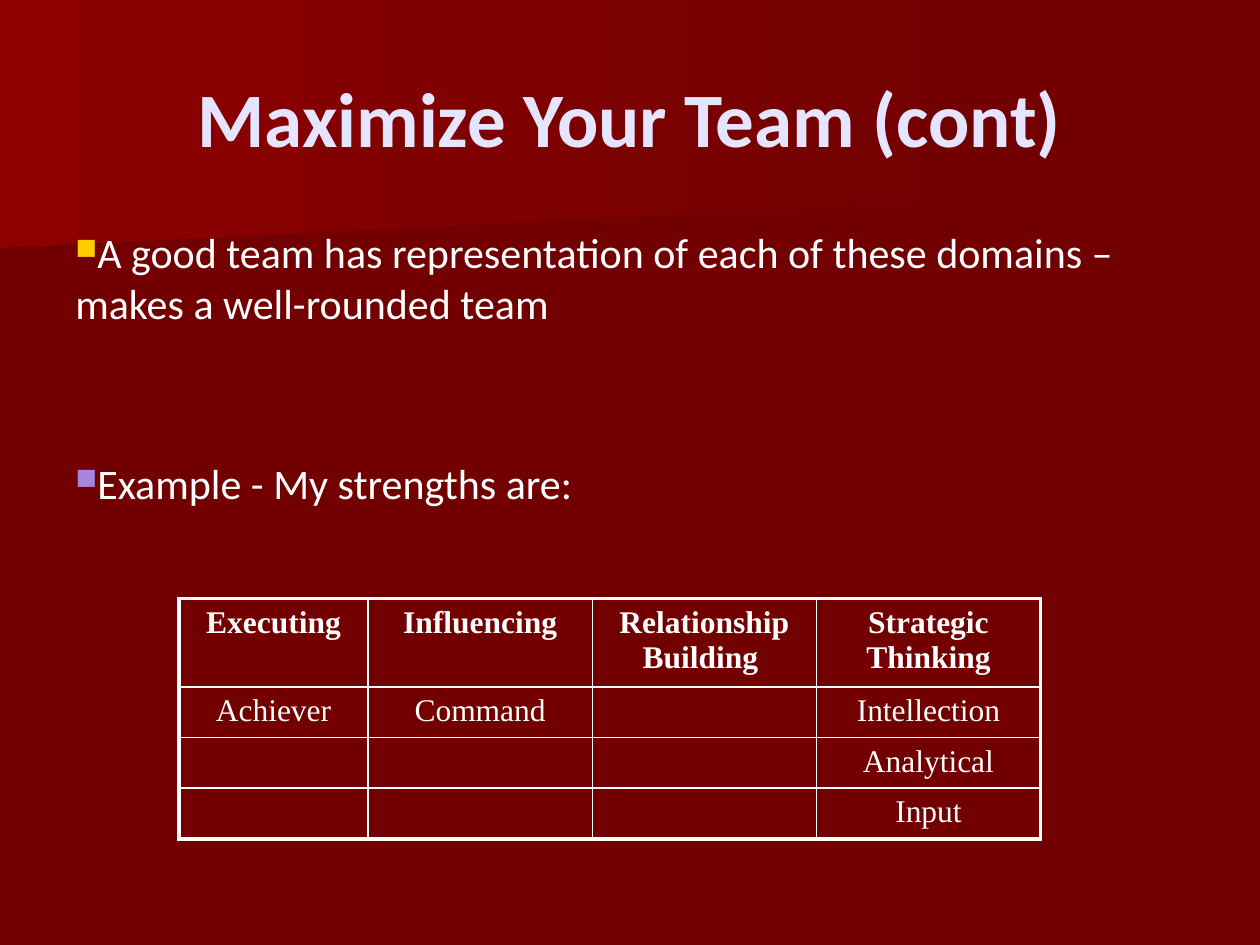
from lxml.etree import SubElement
from pptx import Presentation
from pptx.dml.color import RGBColor
from pptx.enum.text import MSO_ANCHOR, PP_ALIGN
from pptx.oxml.ns import qn
from pptx.util import Cm, Pt

COLORS = {
    "back": "720000", "band_low": "6F0000", "band_high": "8C0000",
    "title": "E5E5FF", "text": "FFFFFF", "gold": "FFCC00", "violet": "A886E0",
}
TITLE = "Maximize Your Team (cont)"
# text, bullet colour, space before in points
BULLETS = [
    ("A good team has representation of each of these domains – makes a well-rounded team", "gold", 7),
    ("Example - My strengths are:", "violet", 74),
]
STRENGTHS = [
    ["Executing", "Influencing", "Relationship Building ", "Strategic Thinking"],
    ["Achiever", "Command", "", "Intellection"],
    ["", "", "", "Analytical"],
    ["", "", "", "Input"],
]
COLUMN_WIDTHS = [3.81, 4.52, 4.52, 4.52]
ROW_HEIGHTS = [1.78, 1.02, 1.02, 1.02]
# left colour and outline points in cm
BANDS = [
    ("band_low", [(19.76, 3.89), (0, 5.49), (0, 2.57), (19.79, 2.57), (19.76, 3.25)]),
    ("band_high", [(20.12, 4.11), (0, 5.28), (0, 0), (20.12, 0)]),
]


def rgb(name):
    return RGBColor.from_string(COLORS[name])


def style(para, font, size, color, bold=False):
    for span in para.runs:
        span.font.name, span.font.size, span.font.bold = font, Pt(size), bold
        span.font.color.rgb = rgb(color)


def add_text_box(page, left, top, width, height):
    frame = page.shapes.add_textbox(Cm(left), Cm(top), Cm(width), Cm(height)).text_frame
    frame.word_wrap = True
    return frame


def add_bullet(para, color):
    props = para._p.get_or_add_pPr()
    tint = SubElement(props, qn("a:buClr"))
    SubElement(tint, qn("a:srgbClr"), val=COLORS[color])
    SubElement(props, qn("a:buSzPct"), val="70000")
    SubElement(props, qn("a:buChar"), char="■")


def set_borders(cell, widths):
    props = cell._tc.get_or_add_tcPr()
    for position, (side, width) in enumerate(widths.items()):
        line = props.makeelement(qn(f"a:ln{side}"), {"w": str(Pt(width))})
        fill = SubElement(line, qn("a:solidFill"))
        SubElement(fill, qn("a:srgbClr"), val=COLORS["text"])
        props.insert(position, line)


deck = Presentation()
deck.slide_width, deck.slide_height = Cm(25.4), Cm(19.05)
page = deck.slides.add_slide(deck.slide_layouts[6])
page.background.fill.solid()
page.background.fill.fore_color.rgb = rgb("back")

# Background bands
for color, points in BANDS:
    builder = page.shapes.build_freeform(*points[0], scale=Cm(1))
    builder.add_line_segments(points[1:], close=True)
    band = builder.convert_to_shape()
    band.shadow.inherit = False
    band.line.fill.background()
    band.fill.gradient()
    band.fill.gradient_angle = 0
    for stop, stop_color in zip(band.fill.gradient_stops, (color, "back")):
        stop.color.rgb = rgb(stop_color)

# Title
frame = add_text_box(page, 1.27, 0.76, 22.86, 3.18)
frame.vertical_anchor = MSO_ANCHOR.MIDDLE
frame.text = TITLE
frame.paragraphs[0].alignment = PP_ALIGN.CENTER
style(frame.paragraphs[0], "Calibri", 44, "title", bold=True)

# Bullets
frame = add_text_box(page, 1.27, 4.45, 23.29, 12.57)
frame.text = "\n".join(text for text, _, _ in BULLETS)
for para, (_, color, gap) in zip(frame.paragraphs, BULLETS):
    para.space_before = Pt(gap)
    style(para, "Calibri", 24, "text")
    add_bullet(para, color)

# Strengths table
table = page.shapes.add_table(
    len(ROW_HEIGHTS), len(COLUMN_WIDTHS), Cm(3.61), Cm(12.07),
    Cm(sum(COLUMN_WIDTHS)), Cm(sum(ROW_HEIGHTS))).table
table.first_row = table.horz_banding = False
for column, width in zip(table.columns, COLUMN_WIDTHS):
    column.width = Cm(width)
for row, height in zip(table.rows, ROW_HEIGHTS):
    row.height = Cm(height)

last_row, last_column = len(ROW_HEIGHTS) - 1, len(COLUMN_WIDTHS) - 1
for r, texts in enumerate(STRENGTHS):
    for c, text in enumerate(texts):
        cell = table.cell(r, c)
        cell.fill.background()
        para = cell.text_frame.paragraphs[0]
        para.alignment = PP_ALIGN.CENTER
        if text:
            para.text = text
            style(para, "Times New Roman", 18, "text", bold=r == 0)
        else:
            end = SubElement(para._p, qn("a:endParaRPr"), sz="1800")
            SubElement(end, qn("a:latin"), typeface="Times New Roman")
        outer = {"L": c == 0, "R": c == last_column, "T": r == 0, "B": r == last_row}
        set_borders(cell, {side: 2.25 if edge else 1 for side, edge in outer.items()})

deck.save("out.pptx")
